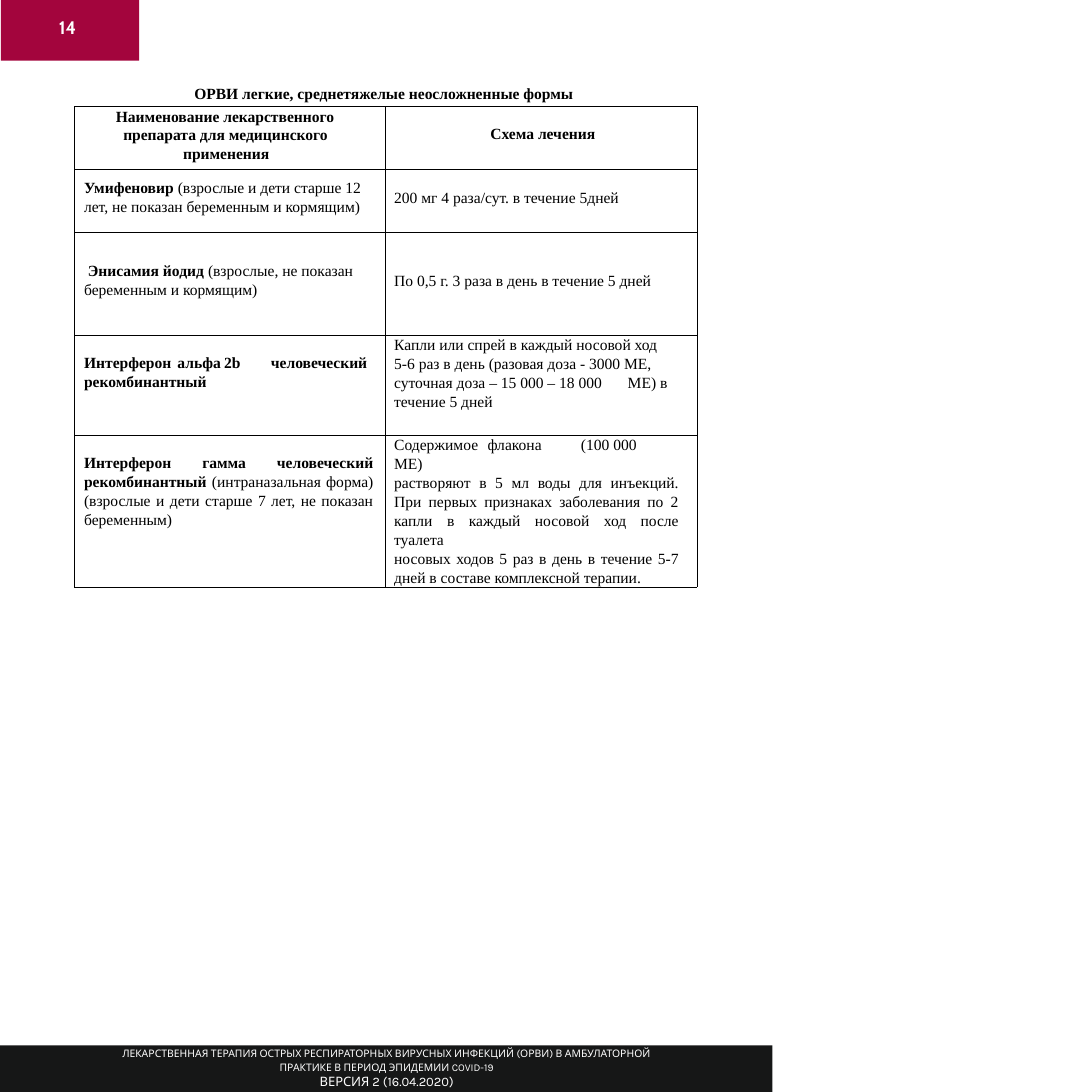
from dataclasses import dataclass

from lxml.etree import SubElement
from pptx import Presentation
from pptx.dml.color import RGBColor
from pptx.enum.shapes import MSO_SHAPE
from pptx.enum.text import MSO_ANCHOR, MSO_AUTO_SIZE, PP_ALIGN
from pptx.oxml.ns import qn
from pptx.util import Inches, Pt

COLORS = {"footer": "161717", "accent": "A3053D", "light": "FFFFFF", "ink": "000000"}
BODY_FONT = "Times New Roman"
COLUMN_WIDTHS = (3.32, 3.34)
ROW_HEIGHTS = (0.67, 0.68, 1.1, 1.07, 1.51)


@dataclass
class Line:
    """A paragraph: a bold part, a regular part and its layout in inches."""
    bold: str = ""
    regular: str = ""
    left: float = 0.1
    first: float = 0
    tabs: tuple = ()
    justified: bool = False


@dataclass
class Entry:
    """Content of a table cell with its inner margins in inches."""
    lines: list
    top: float = 0
    right: float = 0


TREATMENTS = [
    [Entry([Line("Наименование лекарственного", left=0.44),
            Line("препарата для медицинского применения", left=1.16, first=-0.64)]),
     Entry([Line("Схема лечения", left=1.13)], top=0.19)],
    [Entry([Line("Умифеновир ", "(взрослые и дети старше 12 лет, не показан "
                 "беременным и кормящим)")], top=0.1),
     Entry([Line(regular="200 мг 4 раза/сут. в течение 5дней")], top=0.2)],
    [Entry([Line("Энисамия йодид ", "(взрослые, не показан беременным и кормящим)",
                 first=0.04)], top=0.3),
     Entry([Line(regular="По 0,5 г. 3 раза в день в течение 5 дней")], top=0.41)],
    [Entry([Line("Интерферон\tальфа\t2b\tчеловеческий рекомбинантный",
                 tabs=(1.21, 1.84, 2.19))], top=0.19),
     Entry([Line(regular="Капли или спрей в каждый носовой ход"),
            Line(regular="5-6 раз в день (разовая доза - 3000 ME, суточная доза – "
                 "15 000 – 18 000\tME) в", tabs=(2.68,)),
            Line(regular="течение 5 дней")], right=0.19)],
    [Entry([Line("Интерферон гамма человеческий рекомбинантный ",
                 "(интраназальная форма) (взрослые и дети старше 7 лет, "
                 "не показан беременным)", justified=True)], top=0.19, right=0.12),
     Entry([Line(regular="Содержимое\tфлакона\t(100 000\tМЕ)", tabs=(1.1, 1.88, 2.69)),
            Line(regular="растворяют в 5 мл воды для инъекций. При первых признаках "
                 "заболевания по 2 капли в каждый носовой ход после туалета",
                 justified=True),
            Line(regular="носовых ходов 5 раз в день в течение 5-7 дней в составе "
                 "комплексной терапии.", justified=True)], right=0.19)],
]


def color(name):
    return RGBColor.from_string(COLORS[name])


def style(font, name, size, color_name, bold=False):
    font.name = name
    font.size = Pt(size)
    font.bold = bold
    font.color.rgb = color(color_name)


def add_band(slide, left, top, width, height, color_name):
    band = slide.shapes.add_shape(
        MSO_SHAPE.RECTANGLE, Inches(left), Inches(top), Inches(width), Inches(height))
    band.shadow.inherit = False
    band.fill.solid()
    band.fill.fore_color.rgb = color(color_name)
    band.line.fill.background()


def prepare_frame(text_frame, wrap):
    text_frame.margin_left = text_frame.margin_right = text_frame.margin_bottom = 0
    text_frame.margin_top = Inches(0.01)
    text_frame.vertical_anchor = MSO_ANCHOR.TOP
    text_frame.auto_size = MSO_AUTO_SIZE.NONE
    text_frame.word_wrap = wrap


def add_text_box(slide, left, top, width, height, wrap=True):
    box = slide.shapes.add_textbox(
        Inches(left), Inches(top), Inches(width), Inches(height))
    prepare_frame(box.text_frame, wrap)
    return box.text_frame


def add_heading(slide):
    title = slide.shapes.title
    title.left, title.top = Inches(2.08), Inches(0.89)
    title.width, title.height = Inches(4.1), Inches(0.23)
    prepare_frame(title.text_frame, wrap=False)
    paragraph = title.text_frame.paragraphs[0]
    paragraph.text = "ОРВИ легкие, среднетяжелые неосложненные формы"
    paragraph.alignment = PP_ALIGN.LEFT
    style(paragraph.font, BODY_FONT, 12, "ink", bold=True)


def add_page_number(slide):
    paragraph = add_text_box(slide, 0.63, 0.17, 0.3, 0.26, wrap=False).paragraphs[0]
    paragraph.text = "14"
    style(paragraph.font, "Cabin", 14, "light", bold=True)


def add_footer(slide):
    text_frame = add_text_box(slide, 1.27, 11.19, 5.74, 0.48)
    topic, version = text_frame.paragraphs[0], text_frame.add_paragraph()
    topic.text = ("ЛЕКАРСТВЕННАЯ ТЕРАПИЯ ОСТРЫХ РЕСПИРАТОРНЫХ ВИРУСНЫХ ИНФЕКЦИЙ (ОРВИ) "
                  "В АМБУЛАТОРНОЙ ПРАКТИКЕ В ПЕРИОД ЭПИДЕМИИ COVID-19")
    topic.line_spacing = Pt(10.4)
    version.text = "ВЕРСИЯ 2 (16.04.2020)"
    for paragraph, size in ((topic, 8), (version, 10)):
        paragraph.alignment = PP_ALIGN.CENTER
        style(paragraph.font, "Karla", size, "light")


def fill_paragraph(paragraph, line):
    properties = paragraph._p.get_or_add_pPr()
    properties.set("marL", str(Inches(line.left)))
    properties.set("indent", str(Inches(line.first)))
    if line.tabs:
        tab_list = SubElement(properties, qn("a:tabLst"))
        for position in line.tabs:
            SubElement(tab_list, qn("a:tab"), pos=str(Inches(position)), algn="l")
    paragraph.alignment = PP_ALIGN.JUSTIFY if line.justified else PP_ALIGN.LEFT
    paragraph.line_spacing = Pt(14.6)
    style(paragraph.font, BODY_FONT, 12, "ink", bold=bool(line.bold))
    for text, bold in ((line.bold, True), (line.regular, False)):
        if text:
            run = paragraph.add_run()
            run.text = text
            run.font.bold = bold


def add_borders(cell):
    properties = cell._tc.get_or_add_tcPr()
    for side in ("lnL", "lnR", "lnT", "lnB"):
        border = SubElement(properties, qn(f"a:{side}"), w=str(Pt(0.5)))
        fill = SubElement(border, qn("a:solidFill"))
        SubElement(fill, qn("a:srgbClr"), val=COLORS["ink"])


def fill_cell(cell, entry):
    cell.margin_left = cell.margin_bottom = 0
    cell.margin_top, cell.margin_right = Inches(entry.top), Inches(entry.right)
    cell.vertical_anchor = MSO_ANCHOR.TOP
    add_borders(cell)
    cell.fill.background()
    for index, line in enumerate(entry.lines):
        text_frame = cell.text_frame
        paragraph = text_frame.add_paragraph() if index else text_frame.paragraphs[0]
        fill_paragraph(paragraph, line)


def add_treatment_table(slide):
    table = slide.shapes.add_table(
        len(ROW_HEIGHTS), len(COLUMN_WIDTHS), Inches(0.8), Inches(1.14),
        Inches(sum(COLUMN_WIDTHS)), Inches(sum(ROW_HEIGHTS))).table
    table.first_row = table.horz_banding = False
    for column, width in zip(table.columns, COLUMN_WIDTHS):
        column.width = Inches(width)
    for row, height, entries in zip(table.rows, ROW_HEIGHTS, TREATMENTS):
        row.height = Inches(height)
        for cell, entry in zip(row.cells, entries):
            fill_cell(cell, entry)


def main():
    presentation = Presentation()
    presentation.slide_width = presentation.slide_height = Inches(11.69)
    slide = presentation.slides.add_slide(presentation.slide_layouts[5])
    add_band(slide, 0, 11.19, 8.27, 0.5, "footer")
    add_band(slide, 0.01, 0, 1.48, 0.65, "accent")
    add_page_number(slide)
    add_footer(slide)
    add_heading(slide)
    add_treatment_table(slide)
    presentation.save("out.pptx")


if __name__ == "__main__":
    main()
